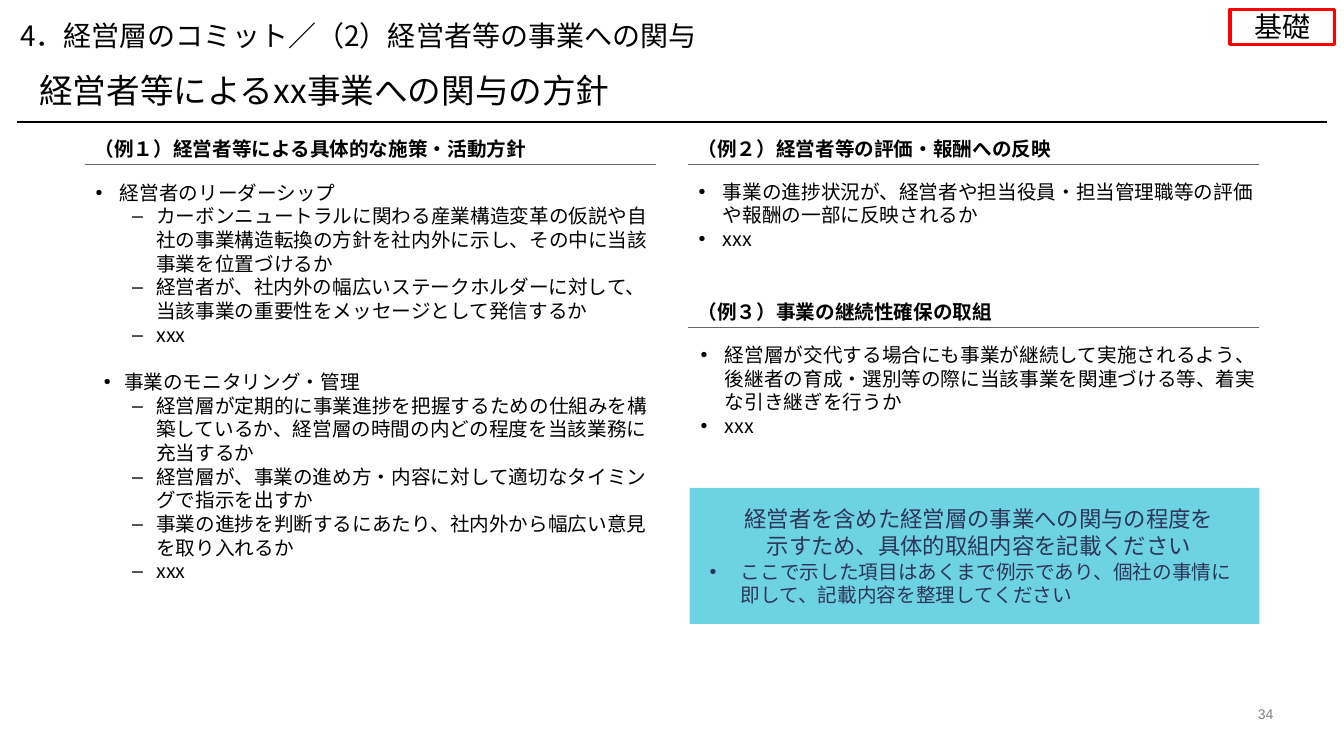
import dataclasses

import pptx
import pptx.dml.color
import pptx.enum.shapes
import pptx.enum.text
import pptx.util
from lxml import etree
from pptx.oxml.ns import qn

Inches = pptx.util.Inches
Pt = pptx.util.Pt
ALIGN = pptx.enum.text.PP_ALIGN
ANCHOR = pptx.enum.text.MSO_ANCHOR


@dataclasses.dataclass(frozen=True)
class Theme:
    japanese: str = "Noto Sans CJK JP"
    latin: str = "Arial"
    ink: str = "000000"
    paper: str = "FFFFFF"
    rule: str = "666666"
    muted: str = "808080"
    badge: str = "FF0000"
    callout: str = "30C1D7"
    callout_ink: str = "2E3558"
    title: int = 24
    chapter: int = 20
    lead: int = 16
    body: int = 14
    page: int = 10
    title_pitch: float = 1.16
    body_pitch: float = 1.207


THEME = Theme()
LEFT, RIGHT, COLUMN = 0.84, 6.82, 5.67
HEADING_HEIGHT = 0.31

TOPIC = (1, 0.35, -0.24, "•")
DETAIL = (2, 0.71, -0.24, "–")
SECOND_TOPIC = (2, 0.39, -0.2, "•")
ADVICE = (0, 0.41, -0.31, "•")

LEADERSHIP = [
    (TOPIC, "経営者のリーダーシップ"),
    (DETAIL, "カーボンニュートラルに関わる産業構造変革の仮説や自社の事業構造転換の方針を社内外に示し、その中に当該事業を位置づけるか"),
    (DETAIL, "経営者が、社内外の幅広いステークホルダーに対して、当該事業の重要性をメッセージとして発信するか"),
    (DETAIL, "xxx"),
    (SECOND_TOPIC, "事業のモニタリング・管理"),
    (DETAIL, "経営層が定期的に事業進捗を把握するための仕組みを構築しているか、経営層の時間の内どの程度を当該業務に充当するか"),
    (DETAIL, "経営層が、事業の進め方・内容に対して適切なタイミングで指示を出すか"),
    (DETAIL, "事業の進捗を判断するにあたり、社内外から幅広い意見を取り入れるか"),
    (DETAIL, "xxx"),
]
EVALUATION = [
    (TOPIC, "事業の進捗状況が、経営者や担当役員・担当管理職等の評価や報酬の一部に反映されるか"),
    (TOPIC, "xxx"),
]
CONTINUITY = [
    (TOPIC, "経営層が交代する場合にも事業が継続して実施されるよう、後継者の育成・選別等の際に当該事業を関連づける等、着実な引き継ぎを行うか"),
    (TOPIC, "xxx"),
]


def rgb(color):
    return pptx.dml.color.RGBColor.from_string(color)


def style(paragraph, size, color=THEME.ink, font=THEME.japanese, bold=False,
          align=ALIGN.LEFT, pitch=None):
    paragraph.alignment = align
    if pitch:
        paragraph.line_spacing = Pt(round(size * pitch, 1))
    for run in paragraph.runs:
        run.font.size = Pt(size)
        run.font.bold = bold
        run.font.color.rgb = rgb(color)
        run.font.name = font
        east_asian = etree.SubElement(run.font._element, qn("a:ea"))
        east_asian.set("typeface", THEME.japanese)


def set_bullet(paragraph, kind, color):
    level, margin, indent, mark = kind
    paragraph.level = level
    properties = paragraph._p.get_or_add_pPr()
    properties.set("marL", str(Inches(margin)))
    properties.set("indent", str(Inches(indent)))
    bullet_color = etree.SubElement(properties, qn("a:buClr"))
    etree.SubElement(bullet_color, qn("a:srgbClr")).set("val", color)
    etree.SubElement(properties, qn("a:buFont")).set("typeface", THEME.latin)
    etree.SubElement(properties, qn("a:buChar")).set("char", mark)


def clear_insets(frame):
    frame.margin_left = frame.margin_right = 0
    frame.margin_top = frame.margin_bottom = 0


def add_text(slide, box, text, size, anchor=ANCHOR.TOP, **look):
    frame = slide.shapes.add_textbox(*map(Inches, box)).text_frame
    frame.word_wrap = True
    frame.vertical_anchor = anchor
    clear_insets(frame)
    frame.text = text
    style(frame.paragraphs[0], size, **look)
    return frame


def add_list(slide, box, items):
    frame = add_text(slide, box, "", THEME.body)
    for number, (kind, text) in enumerate(items):
        item = frame.add_paragraph() if number else frame.paragraphs[0]
        item.text = text
        set_bullet(item, kind, THEME.ink)
        style(item, THEME.body, pitch=THEME.body_pitch)
        if kind == SECOND_TOPIC:
            item.space_before = Pt(17)


def add_panel(slide, box, fill=None, line=None):
    panel = slide.shapes.add_shape(
        pptx.enum.shapes.MSO_SHAPE.RECTANGLE, *map(Inches, box))
    panel.shadow.inherit = False
    if fill:
        panel.fill.solid()
        panel.fill.fore_color.rgb = rgb(fill)
    else:
        panel.fill.background()
    if line:
        panel.line.color.rgb = rgb(line)
        panel.line.width = Pt(2.25)
    else:
        panel.line.fill.background()
    panel.text_frame.word_wrap = True
    panel.text_frame.vertical_anchor = ANCHOR.MIDDLE
    return panel


def add_rule(slide, left, right, y, color, width):
    rule = slide.shapes.add_connector(
        pptx.enum.shapes.MSO_CONNECTOR.STRAIGHT,
        Inches(left), Inches(y), Inches(right), Inches(y))
    rule.line.color.rgb = rgb(color)
    rule.line.width = Pt(width)
    etree.SubElement(rule._element.spPr, qn("a:effectLst"))


def add_heading(slide, left, top, text):
    frame = add_panel(slide, (left, top, COLUMN, HEADING_HEIGHT), THEME.paper).text_frame
    frame.text = text
    style(frame.paragraphs[0], THEME.body, bold=True)
    add_rule(slide, left, left + COLUMN, top + HEADING_HEIGHT, THEME.rule, 0.75)


def add_badge(slide, box, text):
    frame = add_panel(slide, box, line=THEME.badge).text_frame
    clear_insets(frame)
    frame.text = text
    style(frame.paragraphs[0], THEME.chapter, align=ALIGN.CENTER, pitch=THEME.title_pitch)


def add_callout(slide, box, lead_text, advice_text):
    panel = add_panel(slide, box, THEME.callout)
    tint = panel._element.spPr.find(qn("a:solidFill"))[0]
    etree.SubElement(tint, qn("a:alpha")).set("val", "70000")
    frame = panel.text_frame
    lead = frame.paragraphs[0]
    lead.text = lead_text
    lead._p.get_or_add_pPr().set("marL", str(Inches(0.09)))
    advice = frame.add_paragraph()
    advice.text = advice_text
    set_bullet(advice, ADVICE, THEME.callout_ink)
    look = dict(color=THEME.callout_ink, font=THEME.latin, pitch=THEME.body_pitch)
    style(lead, THEME.lead, align=ALIGN.CENTER, **look)
    style(advice, THEME.body, **look)


def main():
    deck = pptx.Presentation()
    deck.slide_width, deck.slide_height = Inches(13.33), Inches(7.5)
    slide = deck.slides.add_slide(deck.slide_layouts[6])

    add_text(slide, (0.2, 0.2, 11.9, 0.3), "4．経営層のコミット／（2）経営者等の事業への関与",
             THEME.chapter, pitch=THEME.title_pitch)
    add_text(slide, (0.39, 0.71, 12.3, 0.36), "経営者等によるxx事業への関与の方針",
             THEME.title, pitch=THEME.title_pitch)
    add_badge(slide, (12.2, 0.09, 1.04, 0.35), "基礎")
    add_rule(slide, 0.17, 13.16, 1.21, THEME.ink, 1)

    add_heading(slide, LEFT, 1.32, "（例１）経営者等による具体的な施策・活動方針")
    add_list(slide, (LEFT, 1.79, COLUMN, 4.51), LEADERSHIP)
    add_heading(slide, RIGHT, 1.32, "（例２）経営者等の評価・報酬への反映")
    add_list(slide, (RIGHT, 1.78, 5.64, 0.9), EVALUATION)
    add_heading(slide, RIGHT, 2.94, "（例３）事業の継続性確保の取組")
    add_list(slide, (6.84, 3.4, 5.65, 1.03), CONTINUITY)
    add_callout(slide, (6.84, 4.84, 5.65, 1.35),
                "経営者を含めた経営層の事業への関与の程度を\v示すため、具体的取組内容を記載ください",
                "ここで示した項目はあくまで例示であり、個社の事情に即して、記載内容を整理してください")
    add_text(slide, (12.21, 7, 0.42, 0.17), "34", THEME.page, ANCHOR.BOTTOM,
             color=THEME.muted, font=THEME.latin, align=ALIGN.RIGHT)
    deck.save("out.pptx")


if __name__ == "__main__":
    main()
